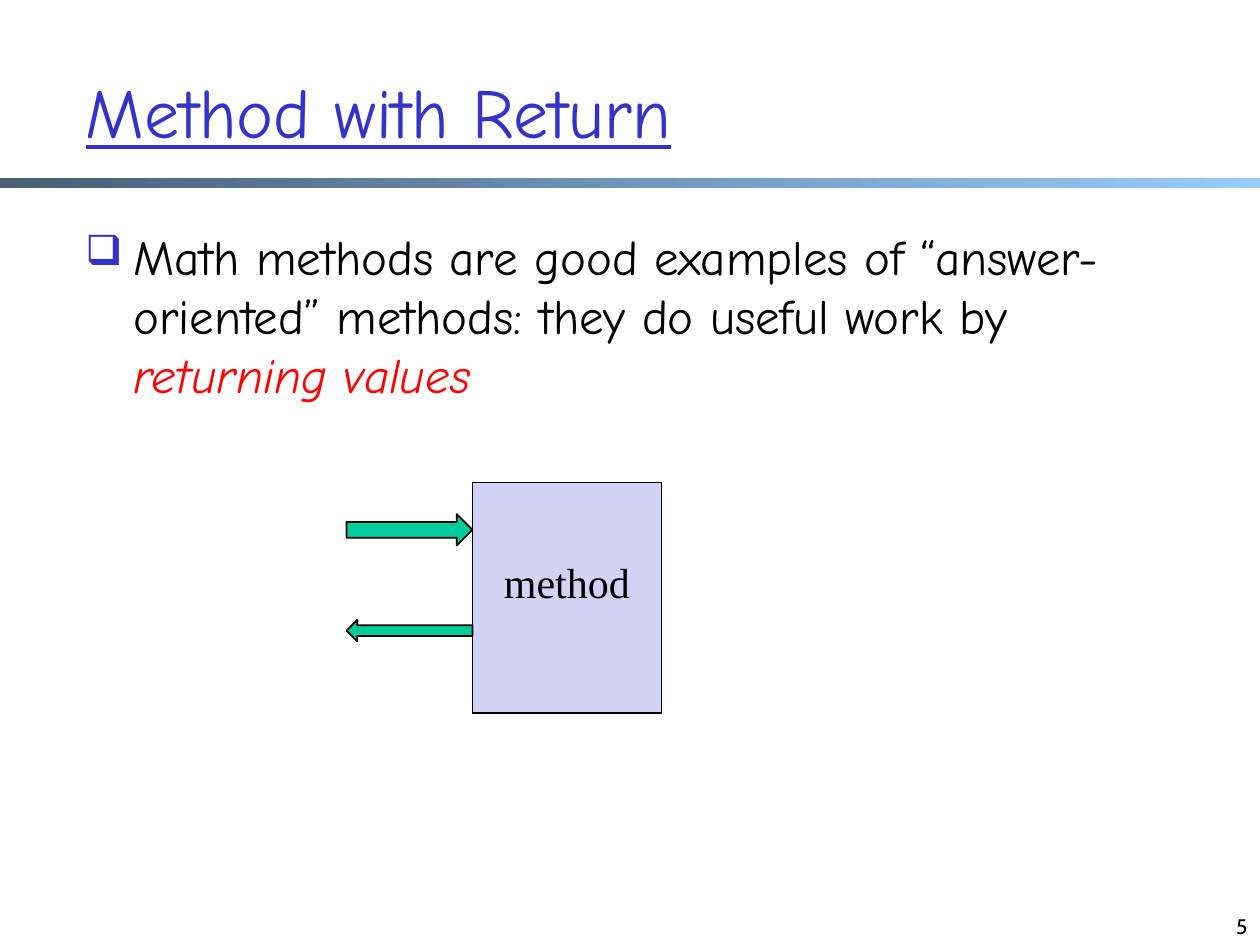
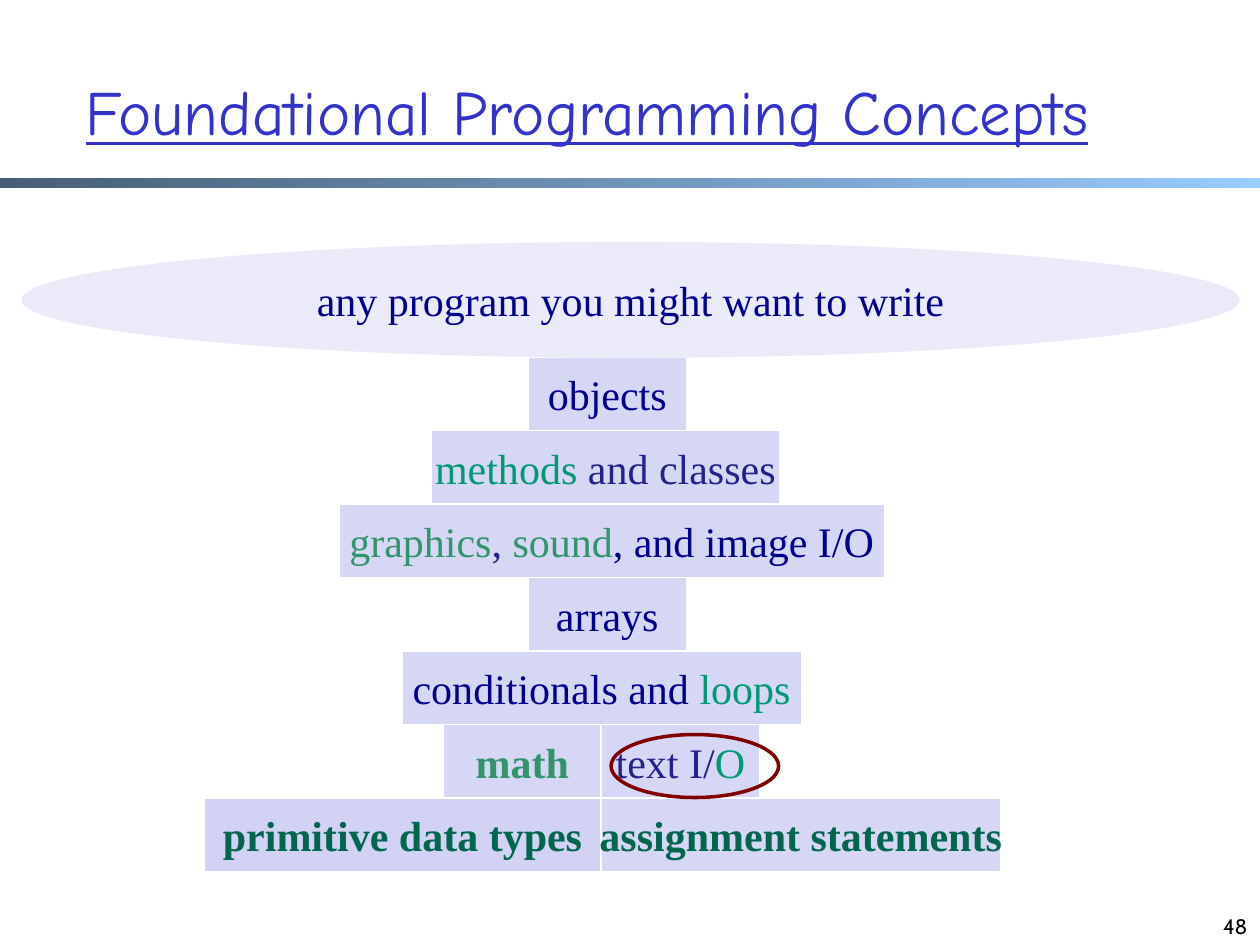
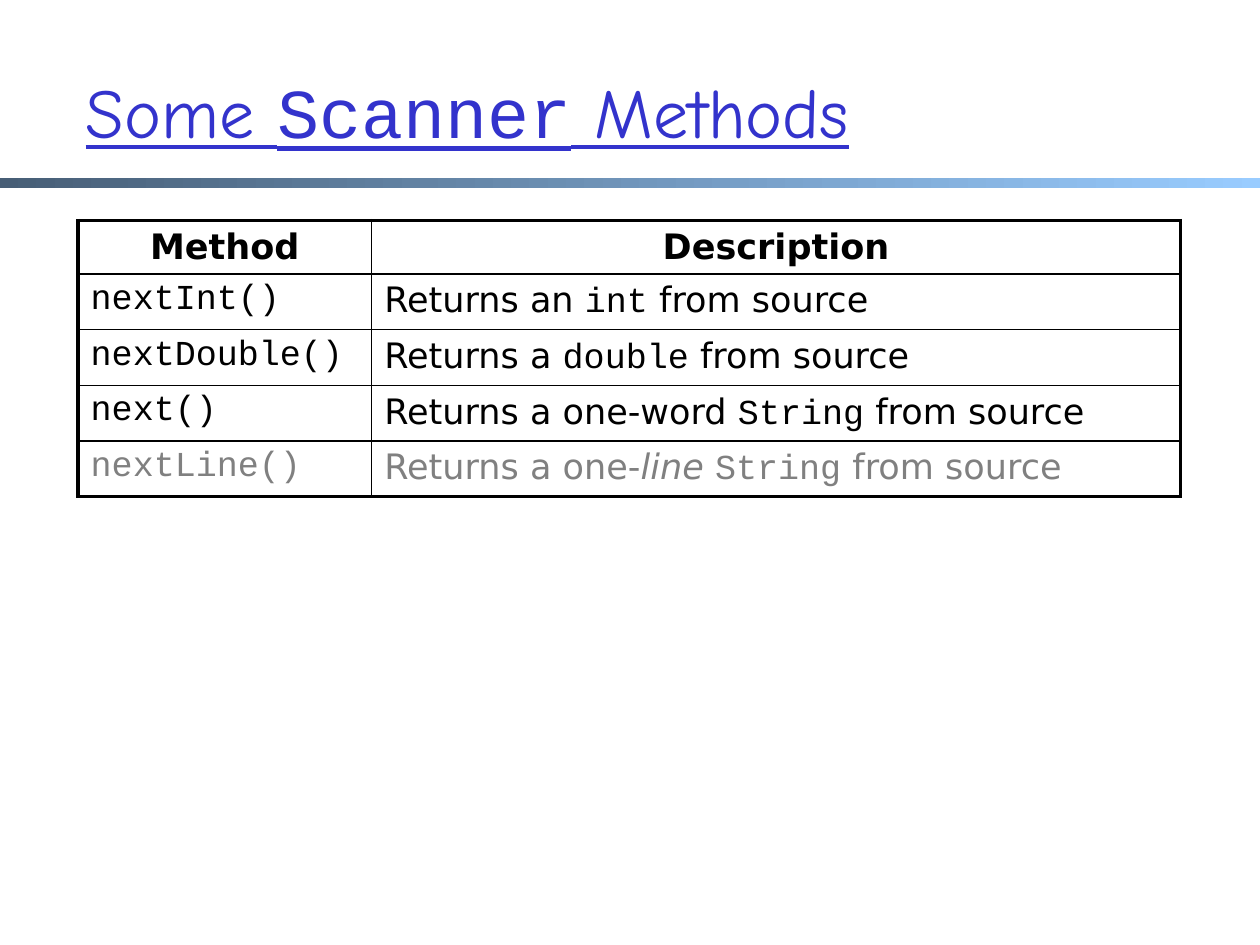
"""Build three teaching slides about methods, program layers and Scanner."""
import dataclasses

import lxml.etree
import pptx
import pptx.dml.color
import pptx.enum.shapes
import pptx.enum.text
import pptx.oxml.ns
import pptx.util

Inches = pptx.util.Inches
Shape = pptx.enum.shapes.MSO_SHAPE
Align = pptx.enum.text.PP_ALIGN
Anchor = pptx.enum.text.MSO_ANCHOR


@dataclasses.dataclass(frozen=True)
class Theme:
    """Colours, fonts and type sizes of the deck."""
    black: str = "000000"
    white: str = "FFFFFF"
    title: str = "3333CC"
    band_start: str = "475E76"
    band_end: str = "99CCFF"
    accent: str = "FF0000"
    arrow: str = "00CC99"
    box: str = "D2D2F4"
    layer: str = "D6D6F5"
    navy: str = "000090"
    indigo: str = "22228B"
    green: str = "009973"
    moss: str = "32946A"
    forest: str = "00664D"
    ring: str = "800000"
    faded: str = "808080"
    hand: str = "Comic Neue"
    code: str = "Courier New"
    sans: str = "DejaVu Sans"
    serif: str = "Times New Roman"
    footer: str = "Cabin"
    title_size: int = 40
    long_title_size: int = 36
    body_size: int = 28
    label_size: int = 24
    table_size: int = 20
    footer_size: int = 12


THEME = Theme()
CODE = {"name": THEME.code}
TITLE = {"name": THEME.hand, "size": THEME.title_size, "rgb": THEME.title, "underline": True}
BODY = {"name": THEME.hand, "size": THEME.body_size, "rgb": THEME.black}
LABEL = {"name": THEME.serif, "size": THEME.label_size, "rgb": THEME.navy}
CELL = {"name": THEME.sans, "size": THEME.table_size, "rgb": THEME.black}
FOOTER = {"name": THEME.footer, "size": THEME.footer_size, "rgb": THEME.black}
FRAME = {"word_wrap": True, "auto_size": pptx.enum.text.MSO_AUTO_SIZE.NONE}


def color(code):
    """Return the colour for a hex code."""
    return pptx.dml.color.RGBColor.from_string(code)


def apply_format(target, values):
    """Set each named attribute of the target."""
    for key, value in values.items():
        setattr(target, key, value)


def add_xml(parent, tag, **attributes):
    """Append a drawing element with attributes and return it."""
    return lxml.etree.SubElement(parent, pptx.oxml.ns.qn(f"a:{tag}"), attributes)


def write_spans(para, spans, style, align=Align.LEFT):
    """Fill a paragraph with (text, changes) spans in a base style."""
    para.alignment = align
    for text, changes in spans:
        span = para.add_run()
        span.text = text
        values = {**style, **changes}
        span.font.color.rgb = color(values.pop("rgb"))
        values["size"] = pptx.util.Pt(values["size"])
        apply_format(span.font, values)


def place(box, area):
    """Move a shape to left, top, width and height in inches."""
    names = ("left", "top", "width", "height")
    apply_format(box, dict(zip(names, map(Inches, area))))


def add_figure(page, kind, area, fill=None, line=None, weight=1):
    """Add a flat preset shape."""
    figure = page.shapes.add_shape(kind, *map(Inches, area))
    figure.shadow.inherit = False
    if fill:
        figure.fill.solid()
        figure.fill.fore_color.rgb = color(fill)
    else:
        figure.fill.background()
    if line:
        figure.line.color.rgb = color(line)
        figure.line.width = pptx.util.Pt(weight)
    else:
        figure.line.fill.background()
    return figure


def add_label(figure, spans, **frame):
    """Write centred label text in a figure."""
    apply_format(figure.text_frame, {"vertical_anchor": Anchor.MIDDLE, "word_wrap": False, **frame})
    write_spans(figure.text_frame.paragraphs[0], spans, LABEL, Align.CENTER)


def add_text(page, area, spans, style, align=Align.LEFT, anchor=Anchor.TOP):
    """Add a text box and return its paragraph."""
    box = page.shapes.add_textbox(*map(Inches, area))
    apply_format(box.text_frame, {**FRAME, "vertical_anchor": anchor})
    para = box.text_frame.paragraphs[0]
    write_spans(para, spans, style, align)
    return para


def add_bullet(para):
    """Give a paragraph a hanging square bullet."""
    settings = para._p.get_or_add_pPr()
    indent = Inches(0.38)
    settings.set("marL", str(indent))
    settings.set("indent", str(-indent))
    add_xml(add_xml(settings, "buClr"), "srgbClr", val=THEME.title)
    add_xml(settings, "buSzPct", val="85000")
    add_xml(settings, "buChar", char="❑")


def prepare_layout(deck):
    """Return the title-only layout with only its title placeholder."""
    layout = deck.slide_layouts[5]
    for box in list(layout.placeholders):
        if box.placeholder_format.idx:
            box.element.getparent().remove(box.element)
    place(layout.placeholders[0], (0.58, 0.25, 8.92, 1.25))
    return layout


def add_band(page):
    """Put the gradient band on the layout behind the title."""
    band = add_figure(page, Shape.RECTANGLE, (0, 1.41, 10, 0.08))
    band.fill.gradient()
    band.fill.gradient_angle = 0
    for stop, code in zip(band.fill.gradient_stops, (THEME.band_start, THEME.band_end)):
        stop.color.rgb = color(code)
    page.slide_layout.placeholders[0].element.addprevious(band.element)


def add_page(deck, layout, title, number=None, **changes):
    """Add a titled page, with its number when given."""
    page = deck.slides.add_slide(layout)
    frame = page.shapes.title.text_frame
    apply_format(frame, {**FRAME, "vertical_anchor": Anchor.MIDDLE})
    write_spans(frame.paragraphs[0], title, {**TITLE, **changes})
    if number:
        add_text(page, (7.67, 7, 2.33, 0.5), [(number, {})], FOOTER, Align.RIGHT, Anchor.BOTTOM)
    return page


def draw_method(page):
    """Draw the statement and the method with its input and output."""
    add_bullet(add_text(page, (0.58, 1.75, 8.5, 1.83), [
        ("Math methods are good examples of “answer-oriented” methods: they do useful work by ", {}),
        ("returning values", {"rgb": THEME.accent, "italic": True}),
    ], BODY))
    method = add_figure(page, Shape.RECTANGLE, (3.75, 3.83, 1.5, 1.83), THEME.box, THEME.black)
    add_label(method, [("method", {"rgb": THEME.black})],
              vertical_anchor=Anchor.TOP, margin_top=Inches(0.59))
    for kind, top, height in ((Shape.RIGHT_ARROW, 4.08, 0.25), (Shape.LEFT_ARROW, 4.92, 0.17)):
        add_figure(page, kind, (2.75, top, 1, height), THEME.arrow, THEME.black)


def draw_layers(page):
    """Draw the stack of programming concepts."""
    green, moss, indigo = ({"rgb": code} for code in (THEME.green, THEME.moss, THEME.indigo))
    strong = {"rgb": THEME.forest, "bold": True}
    courses = [
        [(4.19, 1.26, THEME.layer, [("objects", {})])],
        [(3.42, 2.77, THEME.layer, [("methods ", green), ("and classes", indigo)])],
        [(2.69, 4.33, THEME.layer, [("graphics", moss), (", ", indigo), ("sound", moss),
                                    (", and image I/O", {})])],
        [(4.19, 1.26, THEME.layer, [("arrays", {})])],
        [(3.19, 3.17, THEME.layer, [("conditionals and ", {}), ("loops", green)])],
        [(3.52, 1.25, THEME.layer, [("math", {**moss, "bold": True})]),
         (4.77, 1.26, THEME.layer, [("text I/", indigo), ("O", green)])],
        [(1.62, 3.15, THEME.box, [("primitive data types", strong)]),
         (4.77, 3.17, THEME.layer, [("assignment statements", strong)])],
    ]
    first_top, height = 34 / 12, 7 / 12
    for row, course in enumerate(courses):
        for left, width, fill, spans in course:
            area = (left, first_top + row * height, width, height)
            add_label(add_figure(page, Shape.RECTANGLE, area, fill, THEME.white, 0.75), spans)
    goal = add_figure(page, Shape.OVAL, (0.17, 1.92, 9.67, 0.92), THEME.layer)
    fill_color = next(goal.element.spPr.iter(pptx.oxml.ns.qn("a:srgbClr")))
    add_xml(fill_color, "alpha", val="50000")
    add_label(goal, [("any program you might want to write", {})])
    add_figure(page, Shape.OVAL, (4.85, 5.83, 1.33, 0.5), None, THEME.ring, 2)


def set_borders(cell, weights):
    """Draw cell borders from a dict of side letters and point widths."""
    settings = cell._tc.get_or_add_tcPr()
    for position, side in enumerate("LRTB"):
        line = add_xml(settings, f"ln{side}", w=str(pptx.util.Pt(weights[side])))
        add_xml(add_xml(line, "solidFill"), "srgbClr", val=THEME.black)
        settings.insert(position, line)


def add_grid(page, area, widths, heights, rows):
    """Add a table with a heavy outline and thin inner lines."""
    table = page.shapes.add_table(len(rows), len(widths), *map(Inches, area)).table
    apply_format(table, {"first_row": False, "horz_banding": False})
    for column, width in zip(table.columns, widths):
        column.width = Inches(width)
    for row, height in zip(table.rows, heights):
        row.height = Inches(height)
    thin, heavy = 1, 2.25
    last_row, last_column = len(rows) - 1, len(widths) - 1
    for r, row in enumerate(rows):
        for c, spans in enumerate(row):
            cell = table.cell(r, c)
            cell.fill.background()
            edges = {"L": c == 0, "R": c == last_column, "T": r == 0, "B": r == last_row}
            set_borders(cell, {side: heavy if outer else thin for side, outer in edges.items()})
            align = Align.LEFT if r else Align.CENTER
            write_spans(cell.text_frame.paragraphs[0], spans, CELL, align)


def scanner_row(method, before, kind, changes=None):
    """Return the cells that describe one Scanner method."""
    changes = changes or {}
    description = [*before, (kind, CODE), (" from source", {})]
    return [[(text, {**style, **changes}) for text, style in cell]
            for cell in ([(method, CODE)], description)]


def draw_scanner(page):
    """Draw the table of Scanner methods."""
    rows = [
        [[(heading, {"bold": True})] for heading in ("Method", "Description")],
        scanner_row("nextInt()", [("Returns an ", {})], "int"),
        scanner_row("nextDouble()", [("Returns a ", {})], "double"),
        scanner_row("next()", [("Returns a one-word ", {})], "String"),
        scanner_row("nextLine()", [("Returns a one-", {}), ("line ", {"italic": True})],
                    "String", {"rgb": THEME.faded}),
    ]
    add_grid(page, (0.62, 1.75, 8.75, 2.18), (2.33, 6.42), [0.42] + [0.44] * 4, rows)


def main():
    """Build and save the deck."""
    deck = pptx.Presentation()
    apply_format(deck, {"slide_width": Inches(10), "slide_height": Inches(7.5)})
    layout = prepare_layout(deck)
    page = add_page(deck, layout, [("Method with Return", {})], "5")
    add_band(page)
    draw_method(page)
    draw_layers(add_page(deck, layout, [("Foundational Programming Concepts", {})], "48",
                         size=THEME.long_title_size))
    draw_scanner(add_page(deck, layout, [("Some ", {}), ("Scanner", CODE), (" Methods", {})]))
    deck.save("out.pptx")


if __name__ == "__main__":
    main()
